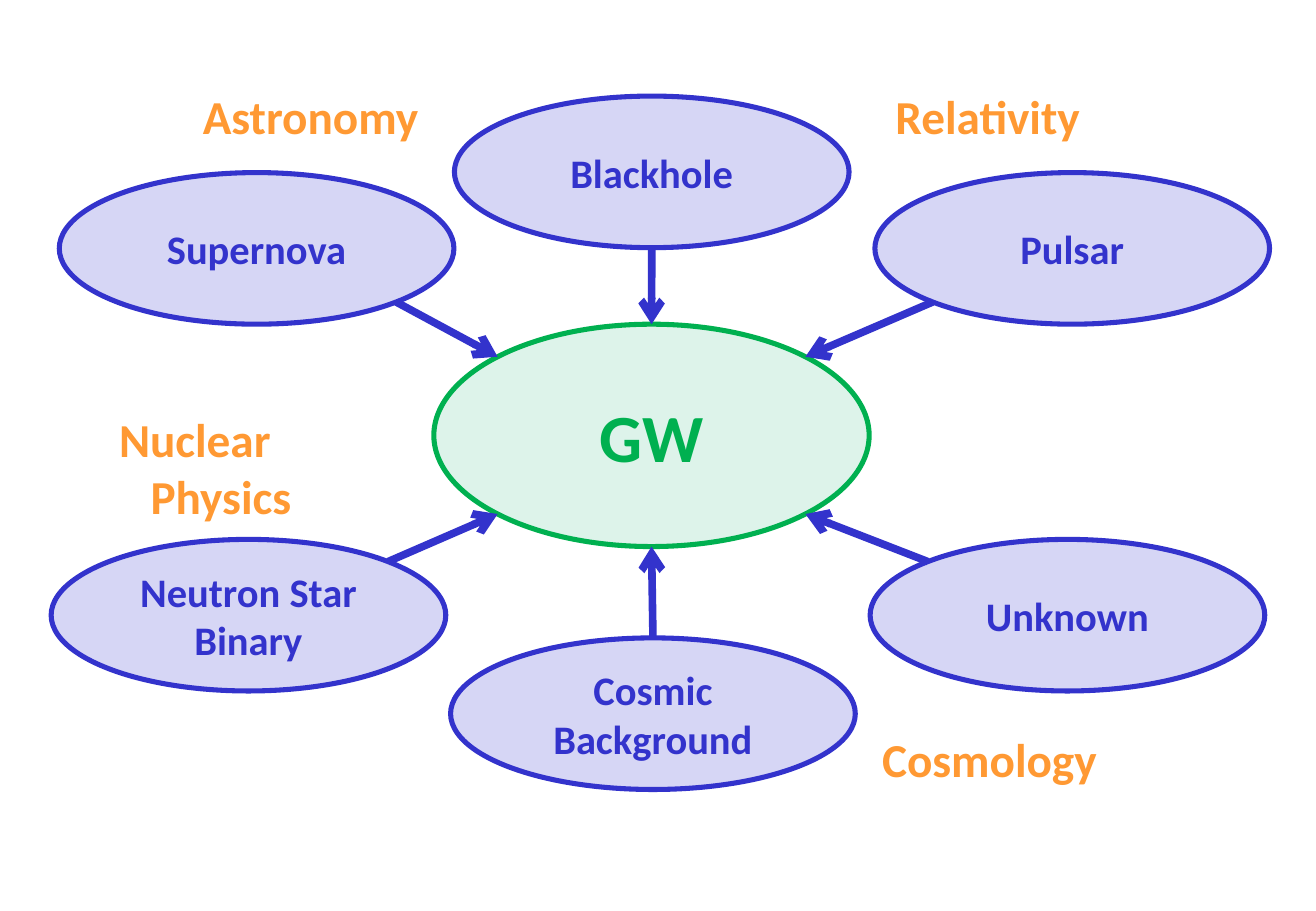
from math import sqrt
from pptx import Presentation
from pptx.dml.color import RGBColor
from pptx.enum import shapes as sh, text as tx
from pptx.oxml import ns, xmlchemy as xc
from pptx.util import Cm, Pt

BLUE = RGBColor(0x33, 0x33, 0xCC)
PALE_BLUE = RGBColor(0xD6, 0xD6, 0xF5)
GREEN = RGBColor(0x00, 0xB0, 0x50)
PALE_GREEN = RGBColor(0xDD, 0xF3, 0xEA)
ORANGE = RGBColor(0xFF, 0x99, 0x33)
FONT = "Calibri"

WIDE, TALL = 8.25, 3.17
# text, left, top, width, direction towards the centre
SOURCES = [
    ("Supernova", 1.24, 3.61, WIDE, (1, 1)),
    ("Blackhole", 9.5, 2.01, WIDE, (0, 1)),
    ("Pulsar", 18.29, 3.61, WIDE, (-1, 1)),
    ("Neutron Star Binary", 1.07, 11.28, WIDE, (1, -1)),
    ("Cosmic\nBackground", 9.42, 13.34, 8.46, (0, -1)),
    ("Unknown", 18.19, 11.28, WIDE, (-1, -1)),
]
# text, left, top, width, height
FIELDS = [
    ("Nuclear\nPhysics", 2.24, 8.46, 4.17, 2.64),
    ("Astronomy", 3.99, 1.7, 5.05, 1.45),
    ("Cosmology", 18.19, 15.14, 5.03, 1.45),
    ("Relativity", 18.47, 1.7, 4.42, 1.45),
]


def set_text(frame, words, size, color, align):
    frame.text = words
    for para in frame.paragraphs:
        para.alignment = align
        for run in para.runs:
            font = run.font
            font.name, font.size, font.bold = FONT, Pt(size), True
            font.color.rgb = color


def add_oval(slide, words, box, size, color, fill):
    oval = slide.shapes.add_shape(
        sh.MSO_SHAPE.OVAL, *[Cm(side) for side in box])
    oval.shadow.inherit = False
    oval.fill.solid()
    oval.fill.fore_color.rgb = fill
    oval.line.color.rgb = color
    oval.line.width = Pt(3)
    oval.text_frame.word_wrap = True
    oval.text_frame.vertical_anchor = tx.MSO_ANCHOR.MIDDLE
    set_text(oval.text_frame, words, size, color, tx.PP_ALIGN.CENTER)
    return oval


def rim(oval, dx, dy):
    """Return the point on the oval's edge in one of eight directions."""
    part = 1 / sqrt(abs(dx) + abs(dy))
    return (round(oval.left + oval.width / 2 * (1 + dx * part)),
            round(oval.top + oval.height / 2 * (1 + dy * part)))


def add_arrow(slide, start, end):
    arrow = slide.shapes.add_connector(
        sh.MSO_CONNECTOR.STRAIGHT, *start, *end)
    arrow.line.color.rgb = BLUE
    arrow.line.width = Pt(4.5)
    head = xc.OxmlElement("a:tailEnd")
    head.set("type", "arrow")
    arrow.line._get_or_add_ln().append(head)
    arrow._element.spPr.append(xc.OxmlElement("a:effectLst"))


def add_field(slide, words, *box):
    frame = slide.shapes.add_textbox(*[Cm(side) for side in box]).text_frame
    frame.word_wrap = False
    frame.auto_size = tx.MSO_AUTO_SIZE.SHAPE_TO_FIT_TEXT
    set_text(frame, words, 28, ORANGE, tx.PP_ALIGN.LEFT)
    for para in frame.paragraphs[1:]:
        para._p.get_or_add_pPr().set("marL", str(Cm(0.66)))


def main():
    deck = Presentation()
    deck.slide_width, deck.slide_height = Cm(27.51), Cm(19.05)
    slide = deck.slides.add_slide(deck.slide_layouts[6])
    hub = add_oval(slide, "GW", (9.07, 6.78, 9.1, 4.65), 40,
                   GREEN, PALE_GREEN)
    for words, left, top, width, (dx, dy) in SOURCES:
        oval = add_oval(slide, words, (left, top, width, TALL), 24,
                        BLUE, PALE_BLUE)
        add_arrow(slide, rim(oval, dx, dy), rim(hub, -dx, -dy))
    for field in FIELDS:
        add_field(slide, *field)
    deck.save("out.pptx")


if __name__ == "__main__":
    main()
